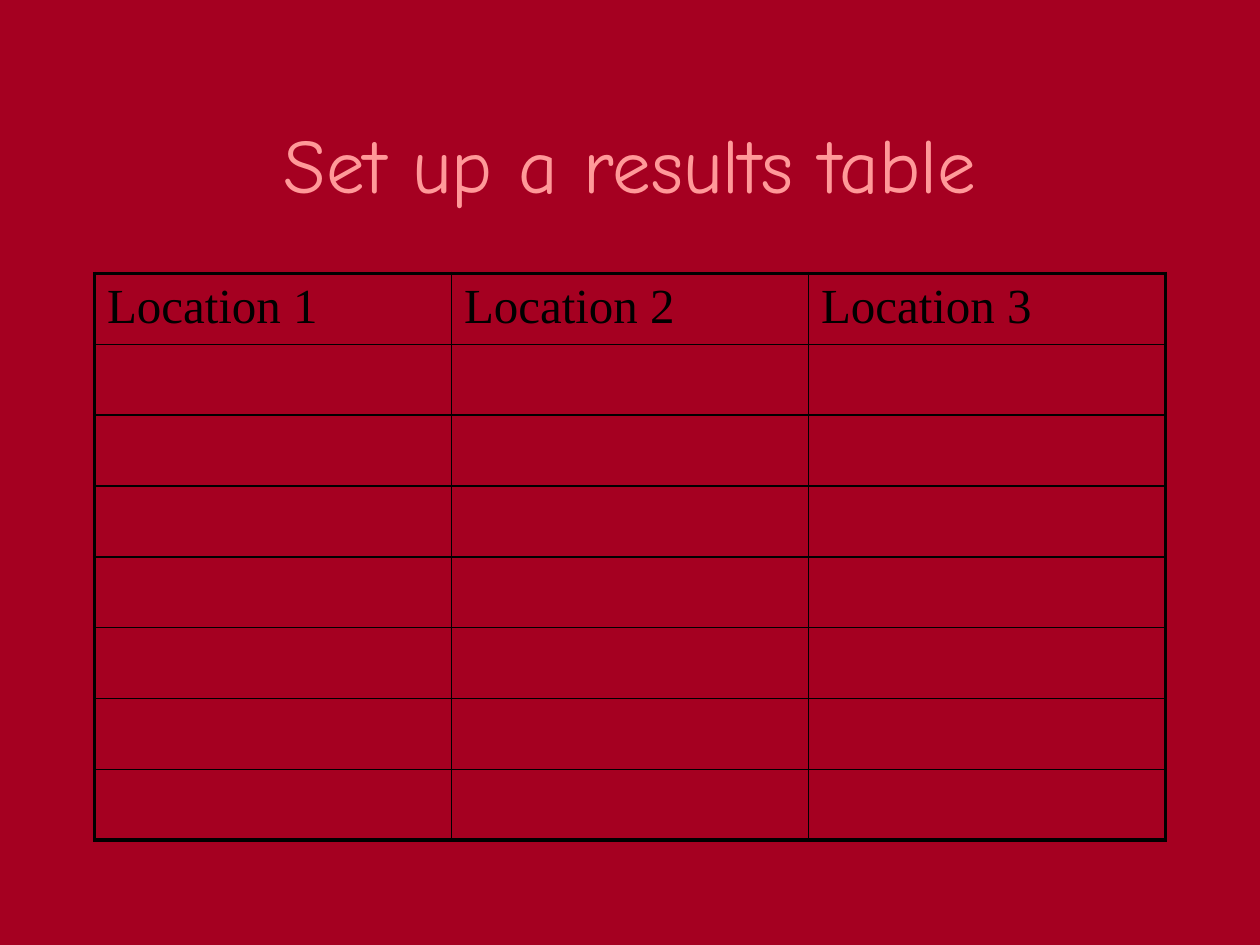
from pptx import Presentation
from pptx.dml.color import RGBColor
from pptx.enum.text import MSO_ANCHOR, PP_ALIGN
from pptx.oxml import parse_xml
from pptx.oxml.ns import nsdecls
from pptx.util import Inches, Pt

CENTER, LEFT = PP_ALIGN.CENTER, PP_ALIGN.LEFT
MIDDLE, TOP = MSO_ANCHOR.MIDDLE, MSO_ANCHOR.TOP
TITLE_ONLY = 5
BACKGROUND, PINK, BLACK = "A50021", "FF9999", "000000"
HEADINGS = ["Location 1", "Location 2", "Location 3"]
ROW_COUNT = 8
OUTER_LINE, INNER_LINE = 2.25, 1


def color(value):
    return RGBColor.from_string(value)


def write_text(holder, text, font, size, fill, align=LEFT, anchor=TOP):
    holder.vertical_anchor = anchor
    para = holder.text_frame.paragraphs[0] if hasattr(holder, "text_frame") else holder.paragraphs[0]
    para.alignment = align
    span = para.add_run()
    span.text = text
    span.font.name = font
    span.font.size = Pt(size)
    span.font.color.rgb = color(fill)


def set_borders(cell, widths):
    properties = cell._tc.get_or_add_tcPr()
    for index, side in enumerate("LRTB"):
        line = parse_xml(
            f'<a:ln{side} {nsdecls("a")} w="{Pt(widths[side])}">'
            f'<a:solidFill><a:srgbClr val="{BLACK}"/></a:solidFill>'
            f'<a:prstDash val="solid"/></a:ln{side}>'
        )
        properties.insert(index, line)


def add_title(page, left, top, width, height):
    title = page.shapes.title
    title.left, title.top = Inches(left), Inches(top)
    title.width, title.height = Inches(width), Inches(height)
    title.text_frame.word_wrap = True
    write_text(title.text_frame, "Set up a results table", font="Comic Neue",
               size=44, fill=PINK, align=CENTER, anchor=MIDDLE)


def add_results_table(page, left, top, width, height):
    column_count = len(HEADINGS)
    table = page.shapes.add_table(ROW_COUNT, column_count, Inches(left), Inches(top),
                                  Inches(width), Inches(height)).table
    table.horz_banding = False
    for row in range(ROW_COUNT):
        for column in range(column_count):
            cell = table.cell(row, column)
            cell.fill.background()
            edges = {"L": column == 0, "R": column == column_count - 1,
                     "T": row == 0, "B": row == ROW_COUNT - 1}
            set_borders(cell, {side: OUTER_LINE if outer else INNER_LINE
                               for side, outer in edges.items()})
    for column, heading in enumerate(HEADINGS):
        write_text(table.cell(0, column), heading, font="Times New Roman",
                   size=28, fill=BLACK)


def main():
    deck = Presentation()
    deck.slide_width, deck.slide_height = Inches(10), Inches(7.5)
    page = deck.slides.add_slide(deck.slide_layouts[TITLE_ONLY])
    page.background.fill.solid()
    page.background.fill.fore_color.rgb = color(BACKGROUND)
    add_title(page, 0.75, 0.67, 8.5, 1.25)
    add_results_table(page, 0.75, 2.17, 8.5, 4.5)
    deck.save("out.pptx")


if __name__ == "__main__":
    main()
